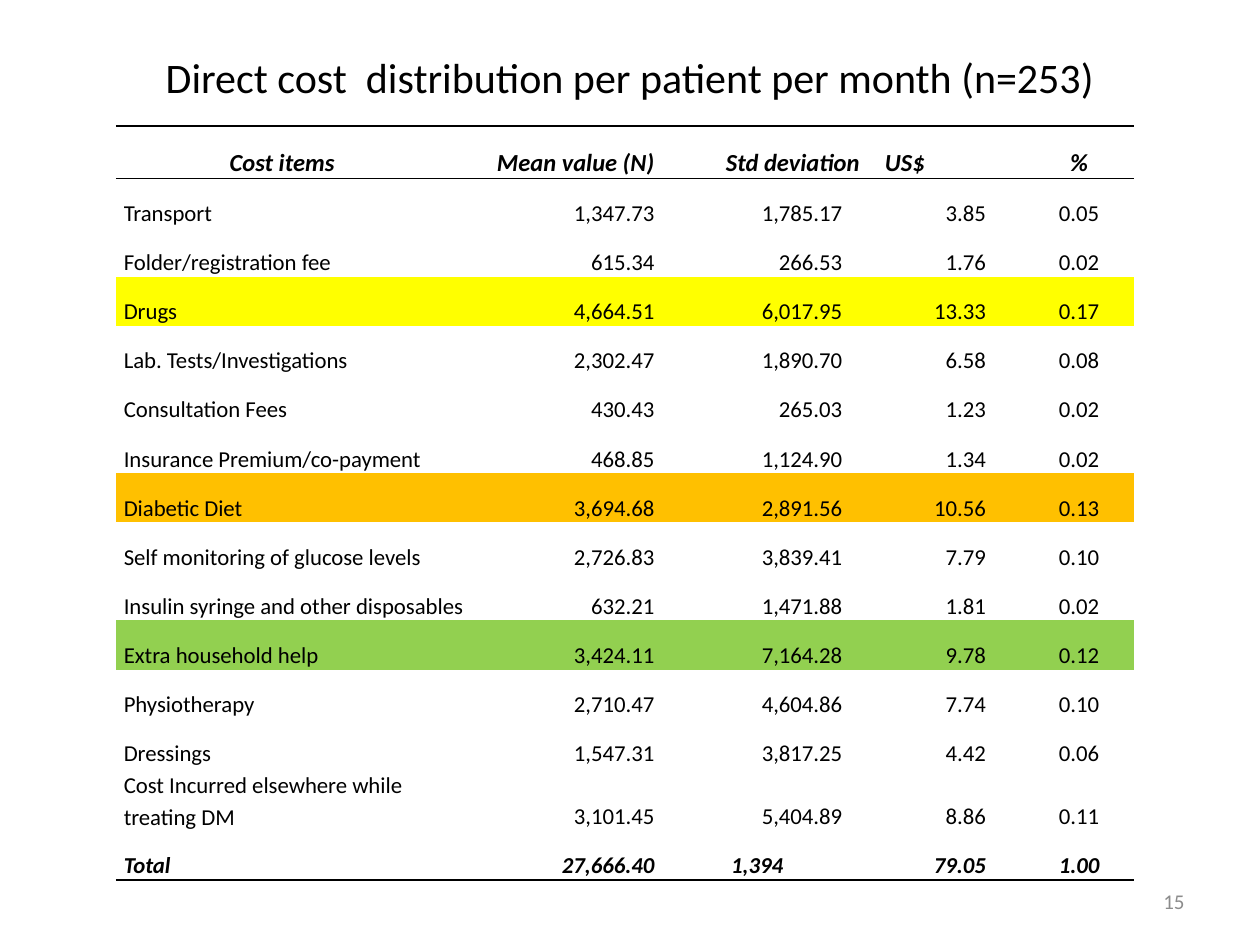
"""Build a slide with a table of direct monthly cost per patient."""
import dataclasses

import pptx
import pptx.dml.color
import pptx.enum.text
import pptx.oxml.ns
import pptx.util
from lxml import etree

Pt = pptx.util.Pt
ALIGN = pptx.enum.text.PP_ALIGN
ANCHOR = pptx.enum.text.MSO_ANCHOR
qn = pptx.oxml.ns.qn


@dataclasses.dataclass(frozen=True)
class Theme:
    font: str = "Calibri"
    ink: str = "000000"
    muted: str = "8C8C8C"
    yellow: str = "FFFF00"
    orange: str = "FFC000"
    green: str = "92D050"
    title: int = 24
    header: int = 14
    body: int = 13
    number: int = 12


theme = Theme()


def write(frame, text, size, color, align, strong=False):
    frame.word_wrap = True
    paragraph = frame.paragraphs[0]
    paragraph.text = text
    paragraph.alignment = align
    font = paragraph.font
    font.name, font.size = theme.font, Pt(size)
    font.bold = font.italic = strong
    font.color.rgb = pptx.dml.color.RGBColor.from_string(color)
    return paragraph


def rule(cell, edge):
    line = etree.Element(qn(edge), w=str(Pt(1)))
    fill = etree.SubElement(line, qn("a:solidFill"))
    etree.SubElement(fill, qn("a:srgbClr"), val=theme.ink)
    cell._tc.get_or_add_tcPr().insert(0, line)


deck = pptx.Presentation()
deck.slide_width, deck.slide_height = Pt(720), Pt(540)
slide = deck.slides.add_slide(deck.slide_layouts[6])

title = slide.shapes.add_textbox(Pt(36), Pt(21.6), Pt(648), Pt(44.64)).text_frame
title.vertical_anchor = ANCHOR.MIDDLE
write(title, "Direct cost  distribution per patient per month (n=253)",
      theme.title, theme.ink, ALIGN.CENTER)

page = slide.shapes.add_textbox(Pt(516.24), Pt(500.4), Pt(167.76), Pt(28.8)).text_frame
page.vertical_anchor = ANCHOR.MIDDLE
write(page, "15", theme.number, theme.muted, ALIGN.RIGHT)

costs = [
    ("Cost items", "Mean value (N)", "Std deviation", "US$", "%"),
    ("Transport", "1,347.73", "1,785.17", "3.85", "0.05"),
    ("Folder/registration fee", "615.34", "266.53", "1.76", "0.02"),
    ("Drugs", "4,664.51", "6,017.95", "13.33", "0.17"),
    ("Lab. Tests/Investigations", "2,302.47", "1,890.70", "6.58", "0.08"),
    ("Consultation Fees", "430.43", "265.03", "1.23", "0.02"),
    ("Insurance Premium/co-payment", "468.85", "1,124.90", "1.34", "0.02"),
    ("Diabetic Diet", "3,694.68", "2,891.56", "10.56", "0.13"),
    ("Self monitoring of glucose levels", "2,726.83", "3,839.41", "7.79", "0.10"),
    ("Insulin syringe and other disposables", "632.21", "1,471.88", "1.81", "0.02"),
    ("Extra household help", "3,424.11", "7,164.28", "9.78", "0.12"),
    ("Physiotherapy", "2,710.47", "4,604.86", "7.74", "0.10"),
    ("Dressings", "1,547.31", "3,817.25", "4.42", "0.06"),
    ("Cost Incurred elsewhere while treating DM", "3,101.45", "5,404.89", "8.86", "0.11"),
    ("Total", "27,666.40", "1,394", "79.05", "1.00"),
]
highlights = {"Drugs": theme.yellow, "Diabetic Diet": theme.orange,
              "Extra household help": theme.green}
column_widths = [210.24, 133.92, 87.84, 87.12, 62.64]
aligns = [ALIGN.LEFT, ALIGN.RIGHT, ALIGN.RIGHT, ALIGN.RIGHT, ALIGN.CENTER]
right_insets = [4.5, 36.5, 17, 22, 4.5]
header_indents = [60.5, 3, 0, 3, 0]
total_row = len(costs) - 1
two_line_row = total_row - 1

table = slide.shapes.add_table(len(costs), len(column_widths), Pt(66.24), Pt(72),
                               Pt(sum(column_widths)), Pt(430.56)).table
table.first_row = table.horz_banding = False
NO_STYLE_NO_GRID = "{2D5ABB26-0587-4C30-8999-92F81FD0307C}"
table._tbl.tblPr.find(qn("a:tableStyleId")).text = NO_STYLE_NO_GRID
for column, width in zip(table.columns, column_widths):
    column.width = Pt(width)

for r, entries in enumerate(costs):
    table.rows[r].height = Pt({0: 30, two_line_row: 33.12}.get(r, 28.08))
    is_header, is_total = r == 0, r == total_row
    for c, entry in enumerate(entries):
        cell = table.cell(r, c)
        left_total = is_total and entry == "1,394"
        starts_left = (is_header and c < 4) or left_total
        indent = header_indents[c] if is_header else 3 if left_total else 0
        cell.margin_left = Pt(4.5 + indent)
        cell.margin_right = Pt(4.5 if starts_left else right_insets[c])
        cell.margin_top = cell.margin_bottom = 0
        cell.vertical_anchor = ANCHOR.BOTTOM
        paragraph = write(cell.text_frame, entry,
                          theme.header if is_header else theme.body, theme.ink,
                          ALIGN.LEFT if starts_left else aligns[c],
                          is_header or is_total)
        paragraph.line_spacing = 1.15
        if entries[0] in highlights:
            cell.fill.solid()
            cell.fill.fore_color.rgb = pptx.dml.color.RGBColor.from_string(
                highlights[entries[0]])
        else:
            cell.fill.background()
        if is_header or is_total:
            rule(cell, "a:lnB")
        if is_header:
            rule(cell, "a:lnT")

deck.save("out.pptx")
